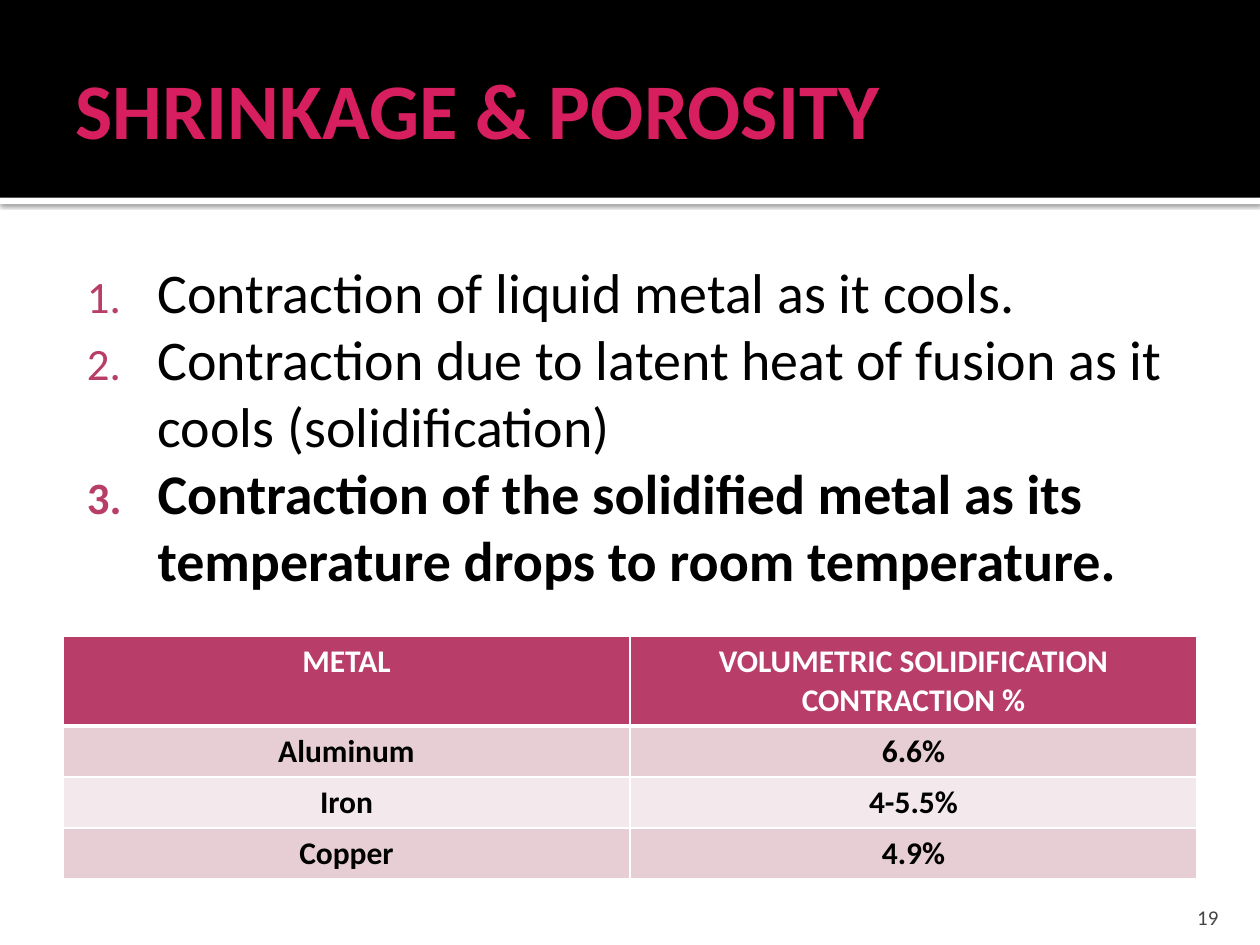
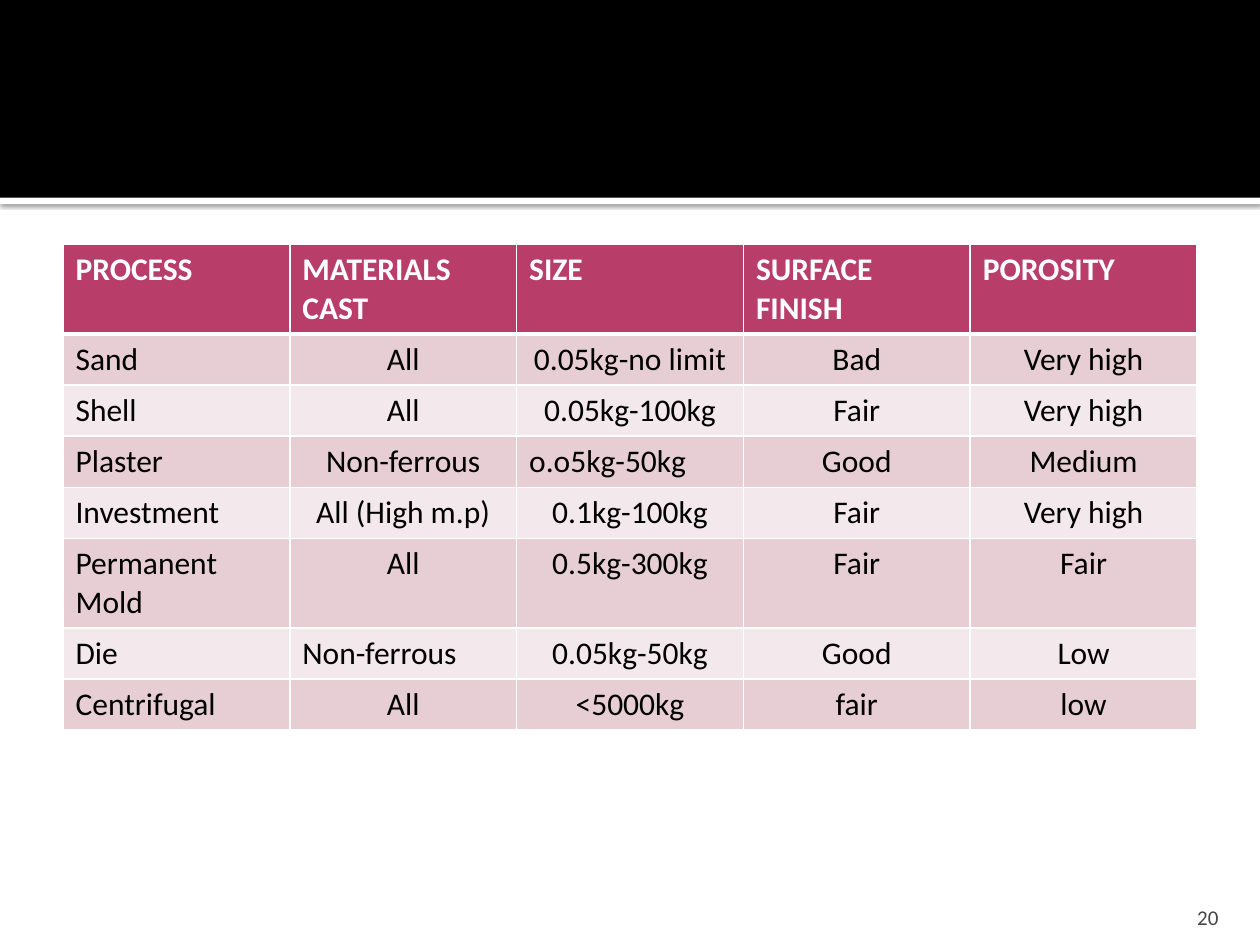
"""Builds two slides on shrinkage, porosity and casting processes."""
import lxml.etree
import pptx
import pptx.dml.color
import pptx.enum.shapes
import pptx.enum.text
import pptx.oxml.ns
import pptx.util

Pt = pptx.util.Pt
RGB = pptx.dml.color.RGBColor
ALIGN = pptx.enum.text.PP_ALIGN
ANCHOR = pptx.enum.text.MSO_ANCHOR
qn = pptx.oxml.ns.qn

BLACK = RGB(0, 0, 0)
WHITE = RGB(255, 255, 255)
PINK = RGB(0xD7, 0x1E, 0x5F)
ROSE = RGB(0xB8, 0x3D, 0x68)
BLUSH = RGB(0xE6, 0xCE, 0xD4)
PALE = RGB(0xF3, 0xE8, 0xEB)
GRAY = RGB(0x45, 0x45, 0x45)

FONT = "Calibri"
WIDTH, HEIGHT = 720, 540
LEFT, SPAN = 36, 648
ROW, TALL = 29.2, 50.2

POINTS = [
    ("Contraction of liquid metal as it cools.", False),
    ("Contraction due to latent heat of fusion as it cools (solidification)", False),
    ("Contraction of the solidified metal as its temperature drops to room temperature.", True),
]
METALS = [
    ("METAL", "VOLUMETRIC SOLIDIFICATION CONTRACTION %"),
    ("Aluminum", "6.6%"),
    ("Iron", "4-5.5%"),
    ("Copper", "4.9%"),
]
CASTING = [
    ("PROCESS", "MATERIALS CAST", "SIZE", "SURFACE FINISH", "POROSITY"),
    ("Sand", "All", "0.05kg-no limit", "Bad", "Very high"),
    ("Shell", "All", "0.05kg-100kg", "Fair", "Very high"),
    ("Plaster", "Non-ferrous", "o.o5kg-50kg", "Good", "Medium"),
    ("Investment", "All (High m.p)", "0.1kg-100kg", "Fair", "Very high"),
    ("Permanent Mold", "All", "0.5kg-300kg", "Fair", "Fair"),
    ("Die", "Non-ferrous", "0.05kg-50kg", "Good", "Low"),
    ("Centrifugal", "All", "<5000kg", "fair", "low"),
]


def node(parent, tag, **attrs):
    item = lxml.etree.SubElement(parent, qn(tag))
    for name, value in attrs.items():
        item.set(name, str(value))
    return item


class Deck:
    def __init__(self):
        self.prs = pptx.Presentation()
        self.prs.slide_width, self.prs.slide_height = Pt(WIDTH), Pt(HEIGHT)
        self.slide = None

    def start(self, layout, number):
        self.slide = self.prs.slides.add_slide(self.prs.slide_layouts[layout])
        self.band(0, 113, BLACK)
        self.band(113, 3.7, WHITE, shade=True)
        self.number(number)

    def band(self, top, height, color, shade=False):
        tree = self.slide.shapes
        band = tree.add_shape(pptx.enum.shapes.MSO_SHAPE.RECTANGLE,
                              0, Pt(top), Pt(WIDTH), Pt(height))
        band.shadow.inherit = False
        band.fill.solid()
        band.fill.fore_color.rgb = color
        band.line.fill.background()
        if shade:
            effects = band.element.spPr.find(qn("a:effectLst"))
            shadow = node(effects, "a:outerShdw", blurRad=Pt(2.5), dist=Pt(0.8),
                          dir=5400000, algn="tl", rotWithShape=0)
            node(node(shadow, "a:srgbClr", val=BLACK), "a:alpha", val=60000)
        tree.element.insert(2, band.element)

    def run(self, para, text, size, color, bold=False):
        run = para.add_run()
        run.text = text
        font = run.font
        font.name, font.size, font.bold = FONT, Pt(size), bold
        font.color.rgb = color

    def frame(self, shape, box, insets, anchor):
        shape.left, shape.top, shape.width, shape.height = map(Pt, box)
        frame = shape.text_frame
        frame.word_wrap = True
        frame.auto_size = pptx.enum.text.MSO_AUTO_SIZE.NONE
        frame.vertical_anchor = anchor
        (frame.margin_left, frame.margin_top,
         frame.margin_right, frame.margin_bottom) = map(Pt, insets)
        return frame

    def title(self, text):
        frame = self.frame(self.slide.shapes.title, (LEFT, 12.2, SPAN, 98.6),
                           (7.2, 3.6, 3.6, 3.6), ANCHOR.MIDDLE)
        para = frame.paragraphs[0]
        para.alignment = ALIGN.LEFT
        self.run(para, text, 45, PINK, True)

    def list(self, items):
        frame = self.frame(self.slide.placeholders[1], (LEFT, 139.7, SPAN, 364.3),
                           (4.3, 7.2, 7.2, 3.6), ANCHOR.TOP)
        for index, (text, bold) in enumerate(items):
            para = frame.add_paragraph() if index else frame.paragraphs[0]
            para.space_before = Pt(0)
            self.run(para, text, 32, BLACK, bold)
            props = para._p.get_or_add_pPr()
            props.set("marL", str(Pt(49.7)))
            props.set("indent", str(Pt(-40.3)))
            node(node(props, "a:buClr"), "a:srgbClr", val=ROSE)
            node(props, "a:buSzPct", val=80000)
            node(props, "a:buFont", typeface="+mj-lt")
            node(props, "a:buAutoNum", type="arabicPeriod")

    def number(self, number):
        box = self.slide.shapes.add_textbox(0, 0, 0, 0)
        frame = self.frame(box, (645.8, 509.8, 57.6, 21.6),
                           (7.2, 3.6, 7.2, 0), ANCHOR.BOTTOM)
        para = frame.paragraphs[0]
        para.alignment = ALIGN.RIGHT
        self.run(para, str(number), 12, GRAY)

    def edges(self, cell, row):
        props = cell._tc.get_or_add_tcPr()
        for side in "LRTB":
            thick = (row, side) in ((0, "B"), (1, "T"))
            line = node(props, f"a:ln{side}", w=Pt(3 if thick else 1))
            node(node(line, "a:solidFill"), "a:srgbClr", val=WHITE)

    def table(self, rows, top, bold, tall, is_left):
        count = len(rows[0])
        heights = [TALL if index in tall else ROW for index in range(len(rows))]
        table = self.slide.shapes.add_table(
            len(rows), count, Pt(LEFT), Pt(top), Pt(SPAN), Pt(sum(heights))).table
        for column in table.columns:
            column.width = Pt(SPAN / count)
        for r, texts in enumerate(rows):
            table.rows[r].height = Pt(heights[r])
            fill = (BLUSH if r % 2 else PALE) if r else ROSE
            for c, text in enumerate(texts):
                cell = table.cell(r, c)
                self.edges(cell, r)
                cell.fill.solid()
                cell.fill.fore_color.rgb = fill
                para = cell.text_frame.paragraphs[0]
                para.alignment = ALIGN.LEFT if is_left(r, c) else ALIGN.CENTER
                self.run(para, text, 18, BLACK if r else WHITE, bold or r == 0)


def main():
    deck = Deck()
    deck.start(1, 19)
    deck.title("SHRINKAGE & POROSITY")
    deck.list(POINTS)
    deck.table(METALS, 363.6, True, {0}, lambda r, c: False)

    deck.start(6, 20)
    deck.table(CASTING, 139.7, False, {0, 5},
               lambda r, c: r == 0 or c == 0 or (r, c) in {(3, 2), (6, 1)})
    deck.prs.save("out.pptx")


if __name__ == "__main__":
    main()
